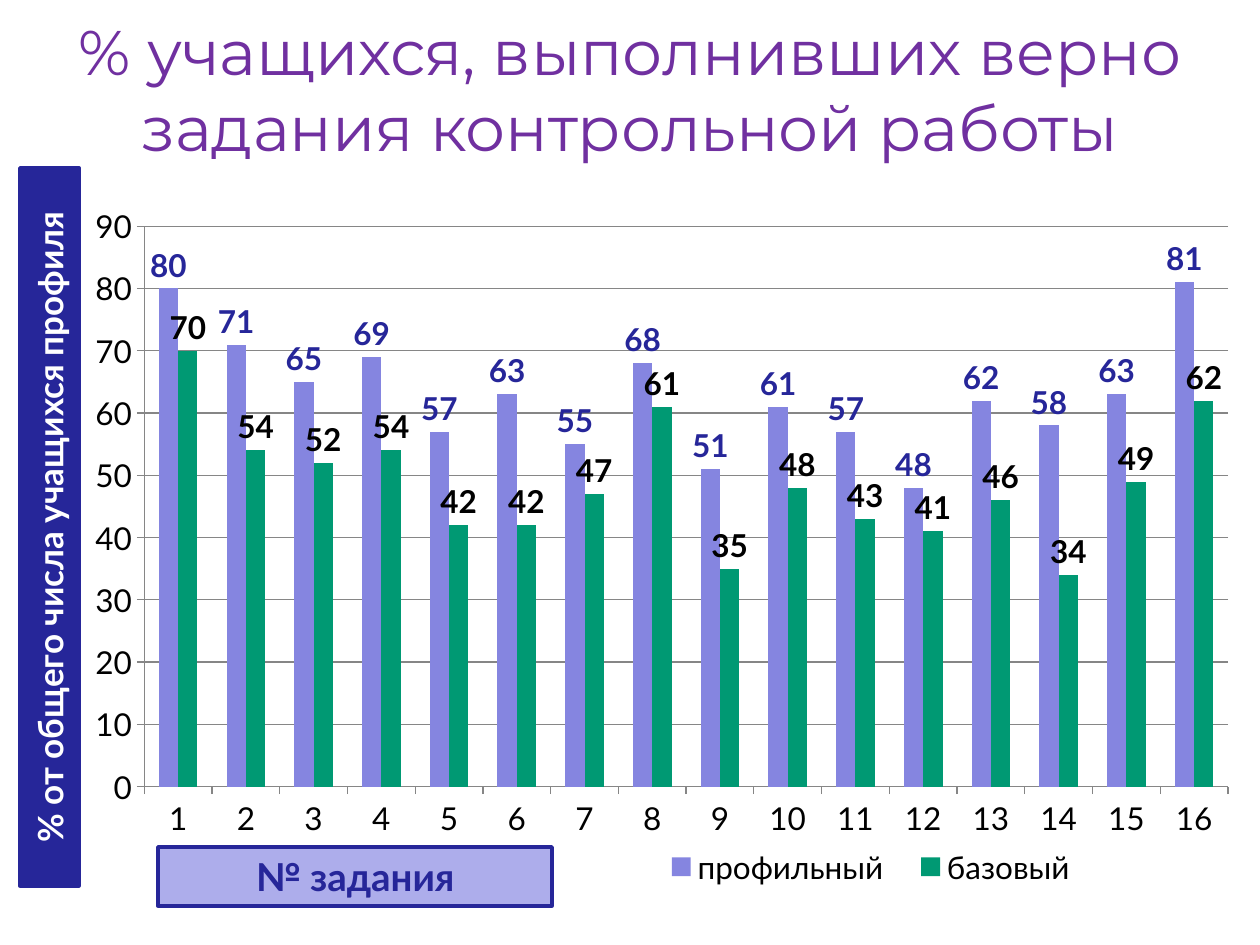
from lxml.etree import SubElement
from pptx import Presentation
from pptx.chart.data import CategoryChartData
from pptx.dml.color import RGBColor
from pptx.enum.chart import XL_CHART_TYPE as ChartType, XL_LABEL_POSITION as LabelPos
from pptx.enum.chart import XL_LEGEND_POSITION as LegendPos, XL_TICK_MARK as Tick
from pptx.enum.shapes import MSO_SHAPE as Preset
from pptx.enum.text import MSO_ANCHOR as Anchor, PP_ALIGN as Align
from pptx.oxml.ns import qn
from pptx.util import Pt

PX = 914400 / 126
PURPLE = RGBColor(0x70, 0x30, 0xA0)
NAVY = RGBColor(0x26, 0x26, 0x99)
LILAC = RGBColor(0x85, 0x85, 0xE0)
PALE = RGBColor(0xAD, 0xAD, 0xEB)
GREEN = RGBColor(0x00, 0x99, 0x73)
GREY = RGBColor(0x86, 0x86, 0x86)
BLACK = RGBColor(0, 0, 0)
WHITE = RGBColor(255, 255, 255)

SERIES = [
    ("профильный", [80, 71, 65, 69, 57, 63, 55, 68, 51, 61, 57, 48, 62, 58, 63, 81],
     LILAC, NAVY),
    ("базовый", [70, 54, 52, 54, 42, 42, 47, 61, 35, 48, 43, 41, 46, 34, 49, 62],
     GREEN, BLACK),
]


def emu(*lengths):
    return [round(length * PX) for length in lengths]


def style_font(font, size, color, bold=False, name="Lato"):
    font.name, font.size, font.bold = name, Pt(size), bold
    font.color.rgb = color


def write(shape, text, *, size, color, bold=False, name="Lato", vert=None):
    frame = shape.text_frame
    frame.word_wrap = True
    frame.vertical_anchor = Anchor.MIDDLE
    if vert:
        frame._txBody.bodyPr.set("vert", vert)
    para = frame.paragraphs[0]
    para.alignment = Align.CENTER
    span = para.add_run()
    span.text = text
    style_font(span.font, size, color, bold, name)


def add_title(page, box, text):
    write(page.shapes.add_textbox(*emu(*box)), text,
          size=36, color=PURPLE, name="Montserrat")


def add_caption(page, box, text, fill, **text_format):
    shape = page.shapes.add_shape(Preset.RECTANGLE, *emu(*box))
    shape.shadow.inherit = False
    shape.fill.solid()
    shape.fill.fore_color.rgb = fill
    shape.line.color.rgb = NAVY
    shape.line.width = Pt(2)
    write(shape, text, bold=True, **text_format)


def set_layout(parent, after, box, inner=False):
    """Fix a chart part at fractions (x, y, w, h) of the chart area."""
    for old in parent.findall(qn("c:layout")):
        parent.remove(old)
    layout = SubElement(parent, qn("c:layout"))
    manual = SubElement(layout, qn("c:manualLayout"))
    values = [("layoutTarget", "inner")] if inner else []
    values += [("xMode", "edge"), ("yMode", "edge"), *zip("xywh", box)]
    for tag, value in values:
        SubElement(manual, qn(f"c:{tag}")).set("val", str(value))
    if after is None:
        parent.insert(0, layout)
    else:
        after.addnext(layout)


def style_axis(axis):
    axis.major_tick_mark = Tick.OUTSIDE
    axis.minor_tick_mark = Tick.NONE
    axis.format.line.color.rgb = GREY
    style_font(axis.tick_labels.font, 18, BLACK)


def add_results(page, box):
    data = CategoryChartData()
    data.categories = [str(number) for number in range(1, 17)]
    for name, values, *_ in SERIES:
        data.add_series(name, values)
    chart = page.shapes.add_chart(ChartType.COLUMN_CLUSTERED, *emu(*box), data).chart
    chart.has_title = False
    style_font(chart.font, 18, BLACK)

    # Axes
    style_axis(chart.category_axis)
    scale = chart.value_axis
    style_axis(scale)
    scale.minimum_scale, scale.maximum_scale, scale.major_unit = 0, 90, 10
    scale.has_major_gridlines = True
    scale.major_gridlines.format.line.color.rgb = GREY

    # Columns and their values
    plot = chart.plots[0]
    plot.vary_by_categories = False
    plot.gap_width, plot.overlap = 150, 0
    for series, (_, _, fill, ink) in zip(plot.series, SERIES):
        series.format.fill.solid()
        series.format.fill.fore_color.rgb = fill
        labels = series.data_labels
        labels.show_value = True
        labels.position = LabelPos.OUTSIDE_END
        style_font(labels.font, 18, ink, bold=True)

    # Legend and plot area
    chart.has_legend = True
    legend = chart.legend
    legend.position = LegendPos.BOTTOM
    legend.include_in_layout = False
    style_font(legend.font, 18, BLACK)
    root = chart.element
    legend_part = root.find(".//" + qn("c:legend"))
    set_layout(legend_part, legend_part.find(qn("c:legendPos")), (0.5, 0.93, 0.38, 0.06))
    set_layout(root.find(".//" + qn("c:plotArea")), None, (0.08, 0.08, 0.91, 0.77), True)


def main():
    deck = Presentation()
    deck.slide_width, deck.slide_height = emu(1260, 945)
    page = deck.slides.add_slide(deck.slide_layouts[6])
    add_title(page, (0, 20, 1260, 137),
              "% учащихся, выполнивших верно задания контрольной работы")
    add_results(page, (49, 168, 1191, 728))
    add_caption(page, (158, 847, 394, 59), "№ задания", PALE, size=22, color=NAVY)
    add_caption(page, (20, 168, 59, 718), "% от общего числа учащихся профиля", NAVY,
                size=20, color=WHITE, vert="vert270")
    deck.save("out.pptx")


if __name__ == "__main__":
    main()
